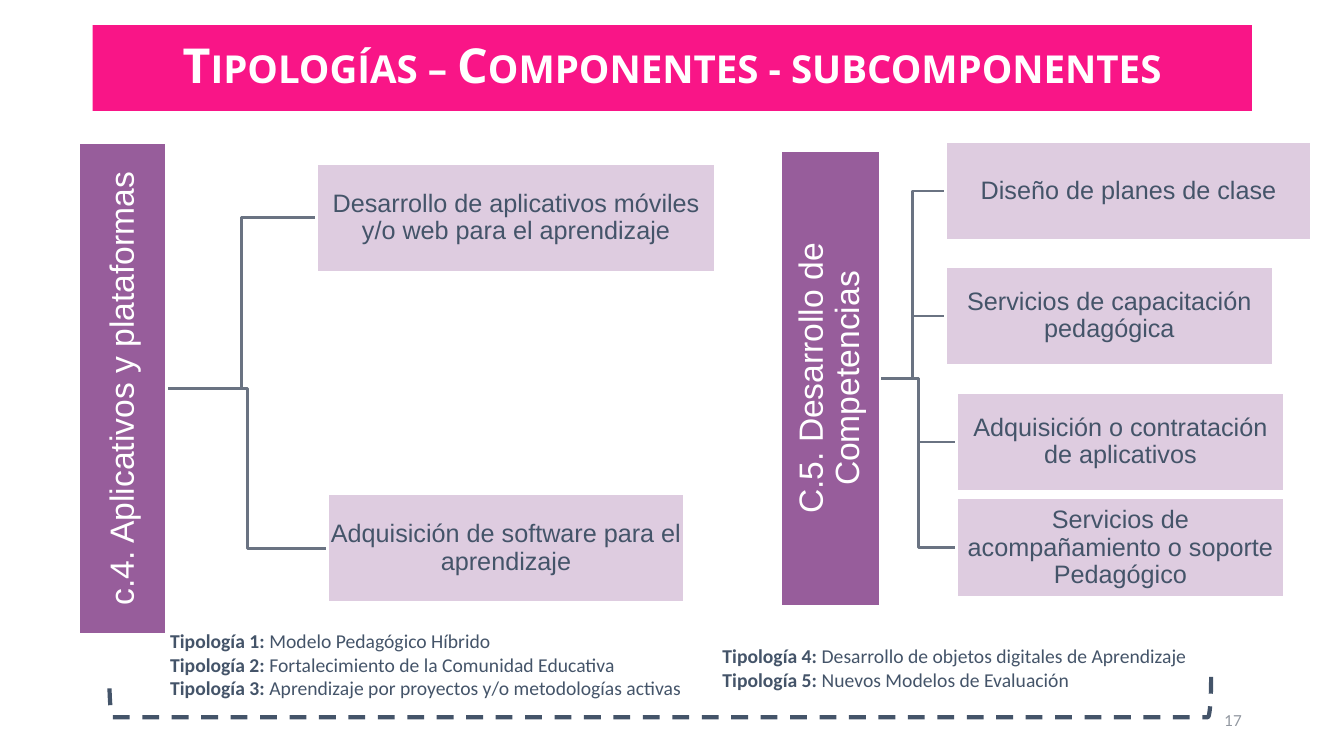
from dataclasses import dataclass

from lxml.etree import SubElement
from pptx import Presentation
from pptx.dml.color import RGBColor
from pptx.enum.dml import MSO_LINE
from pptx.enum.shapes import MSO_SHAPE
from pptx.enum.text import MSO_ANCHOR, MSO_AUTO_SIZE, PP_ALIGN
from pptx.oxml.ns import qn
from pptx.util import Pt

HUES = {
    "pink": "F91587",
    "plum": "7D3583",
    "lilac": "D0B6D3",
    "slate": "445469",
    "link": "6A7382",
    "gray": "9197A0",
    "white": "FFFFFF",
}


@dataclass
class Box:
    text: str
    left: float
    top: float
    width: float
    height: float


@dataclass
class Tree:
    root: Box
    leaves: list[Box]


@dataclass
class Note:
    left: float
    top: float
    width: float
    height: float
    rows: list[tuple[str, str]]


# Root boxes are given as they stand before their quarter turn
TREES = [
    Tree(
        Box("c.4. Aplicativos y plataformas", -87.84, 246.24, 351.36, 62.64),
        [
            Box("Desarrollo de aplicativos móviles y/o web para el aprendizaje",
                226.1, 116.6, 285.1, 77.8),
            Box("Adquisición de software para el aprendizaje",
                234, 352.8, 254.9, 77.8),
        ],
    ),
    Tree(
        Box("C.5. Desarrollo de Competencias", 429.84, 234.72, 326.16, 71.28),
        [
            Box("Diseño de planes de clase", 675.4, 100.8, 261.4, 71.3),
            Box("Servicios de capacitación pedagógica", 675.4, 190.1, 234, 71.3),
            Box("Adquisición o contratación de aplicativos",
                683.3, 280.1, 234, 71.3),
            Box("Servicios de acompañamiento o soporte Pedagógico",
                683.3, 355.7, 234, 71.3),
        ],
    ),
]

NOTES = [
    Note(509, 456.5, 358.6, 58.3, [
        ("Tipología 4: ", "Desarrollo de objetos digitales de Aprendizaje"),
        ("Tipología 5: ", "Nuevos Modelos de Evaluación"),
    ]),
    Note(114.5, 445.7, 397.4, 92.2, [
        ("Tipología 1: ", "Modelo Pedagógico Híbrido"),
        ("Tipología 2: ", "Fortalecimiento de la Comunidad Educativa"),
        ("Tipología 3: ", "Aprendizaje por proyectos y/o metodologías activas"),
    ]),
]


def hue(name: str) -> RGBColor:
    return RGBColor.from_string(HUES[name])


def style(font, face: str, size: float, tint: str, bold: bool = False) -> None:
    font.name, font.size, font.bold = face, Pt(size), bold
    font.color.rgb = hue(tint)


def inset(frame, side: float, ends: float) -> None:
    frame.word_wrap = True
    frame.margin_left = frame.margin_right = Pt(side)
    frame.margin_top = frame.margin_bottom = Pt(ends)


def add_rect(slide, box: Box, tint: str, alpha: int = 100):
    shape = slide.shapes.add_shape(
        MSO_SHAPE.RECTANGLE,
        Pt(box.left), Pt(box.top), Pt(box.width), Pt(box.height))
    shape.shadow.inherit = False
    shape.fill.solid()
    shape.fill.fore_color.rgb = hue(tint)
    if alpha < 100:
        color = shape.fill._xPr.find(".//" + qn("a:srgbClr"))
        SubElement(color, qn("a:alpha")).set("val", str(alpha * 1000))
    shape.text_frame.text = box.text
    shape.text_frame.paragraphs[0].alignment = PP_ALIGN.CENTER
    return shape


def add_title(slide) -> None:
    box = Box("Tipologías – Componentes - subcomponentes", 66.2, 18, 828, 61.2)
    shape = add_rect(slide, box, "pink")
    shape.line.fill.background()
    frame = shape.text_frame
    inset(frame, 7.2, 7.2)
    frame.vertical_anchor = MSO_ANCHOR.TOP
    frame.auto_size = MSO_AUTO_SIZE.SHAPE_TO_FIT_TEXT
    run = frame.paragraphs[0].runs[0]
    style(run.font, "Open Sans", 34.4, "white", True)
    run._r.get_or_add_rPr().set("cap", "small")


def add_node(slide, box: Box, tint: str, alpha: int, size: float,
             ink: str, pad: float, turn: int = 0) -> None:
    shape = add_rect(slide, box, tint, alpha)
    shape.rotation = turn
    shape.line.color.rgb = hue("white")
    shape.line.width = Pt(2)
    frame = shape.text_frame
    inset(frame, pad, pad)
    frame.vertical_anchor = MSO_ANCHOR.MIDDLE
    para = frame.paragraphs[0]
    para.line_spacing = 0.9
    style(para.runs[0].font, "Arial", size, ink)


def add_link(slide, root: Box, leaf: Box) -> None:
    start = root.left + (root.width + root.height) / 2
    level = root.top + root.height / 2
    bend = (start + leaf.left) / 2
    goal = leaf.top + leaf.height / 2
    path = slide.shapes.build_freeform(Pt(start), Pt(level))
    path.add_line_segments(
        [(Pt(bend), Pt(level)), (Pt(bend), Pt(goal)), (Pt(leaf.left), Pt(goal))],
        close=False)
    line = path.convert_to_shape()
    line.shadow.inherit = False
    line.fill.background()
    line.line.color.rgb = hue("link")
    line.line.width = Pt(2)


def add_tree(slide, tree: Tree) -> None:
    for leaf in tree.leaves:
        add_link(slide, tree.root, leaf)
    add_node(slide, tree.root, "plum", 80, 24, "white", 1.4, 270)
    for leaf in tree.leaves:
        add_node(slide, leaf, "lilac", 69, 18, "slate", 0.7)


def add_brace(slide) -> None:
    brace = slide.shapes.add_shape(
        MSO_SHAPE.RIGHT_BRACKET, Pt(457.2), Pt(104.4), Pt(28.8), Pt(787))
    brace.rotation = 90
    brace.adjustments[0] = 0.08
    brace.shadow.inherit = False
    brace.fill.background()
    brace.line.color.rgb = hue("slate")
    brace.line.width = Pt(3)
    brace.line.dash_style = MSO_LINE.DASH


def add_note(slide, note: Note) -> None:
    shape = slide.shapes.add_textbox(
        Pt(note.left), Pt(note.top), Pt(note.width), Pt(note.height))
    frame = shape.text_frame
    inset(frame, 7.2, 3.6)
    frame.auto_size = MSO_AUTO_SIZE.SHAPE_TO_FIT_TEXT
    for spot, row in enumerate(note.rows):
        para = frame.add_paragraph() if spot else frame.paragraphs[0]
        para.alignment = PP_ALIGN.JUSTIFY
        for text, bold in zip(row, (True, False)):
            run = para.add_run()
            run.text = text
            style(run.font, "Calibri", 14, "slate", bold)


def add_page(slide) -> None:
    shape = slide.shapes.add_textbox(Pt(678.2), Pt(500.4), Pt(216), Pt(28.8))
    frame = shape.text_frame
    inset(frame, 7.2, 3.6)
    frame.vertical_anchor = MSO_ANCHOR.MIDDLE
    frame.text = "17"
    para = frame.paragraphs[0]
    para.alignment = PP_ALIGN.RIGHT
    style(para.runs[0].font, "Lato", 10.8, "gray")


def main() -> None:
    deck = Presentation()
    deck.slide_width, deck.slide_height = Pt(960), Pt(540)
    slide = deck.slides.add_slide(deck.slide_layouts[6])

    # Heading and page number
    add_title(slide)
    add_page(slide)

    # Component trees
    for tree in TREES:
        add_tree(slide, tree)

    # Typologies and the bracket below them
    add_brace(slide)
    for note in NOTES:
        add_note(slide, note)

    deck.save("out.pptx")


if __name__ == "__main__":
    main()
